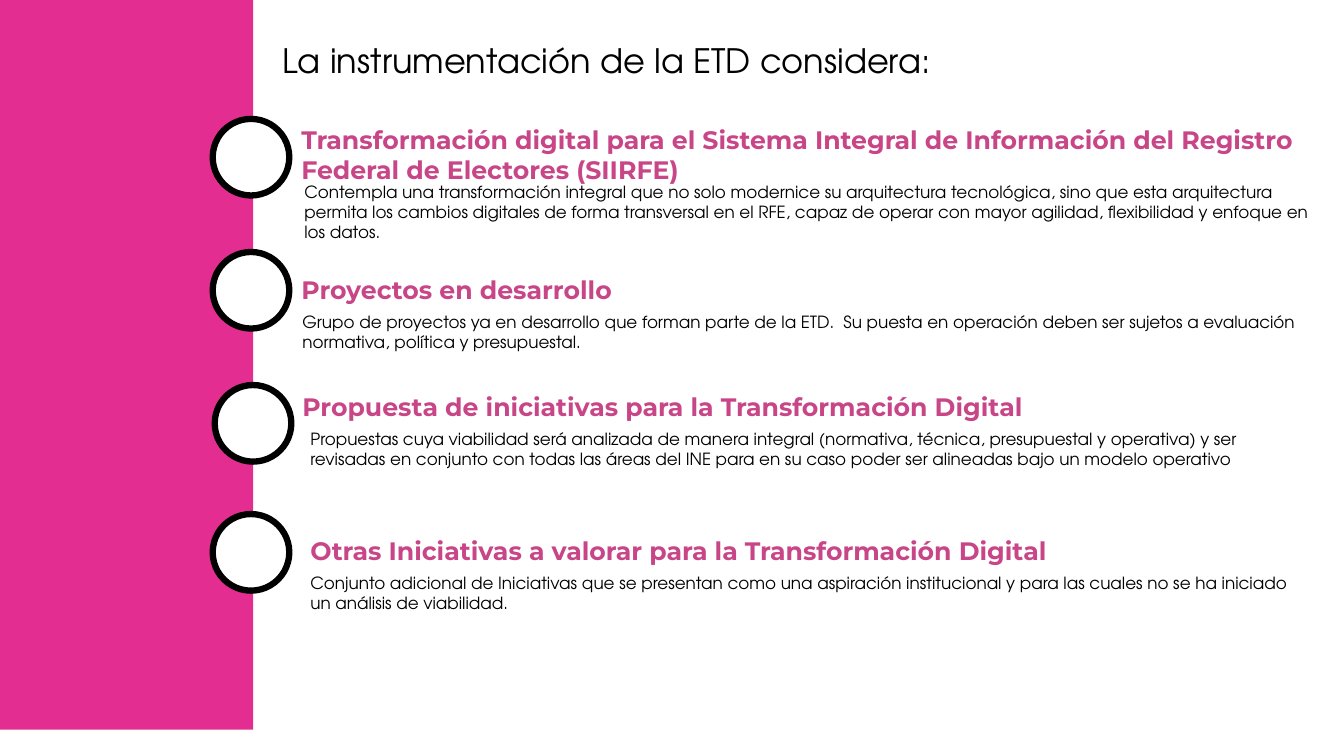
from dataclasses import dataclass

from pptx import Presentation
from pptx import util as u
from pptx.dml.color import RGBColor
from pptx.enum import shapes, text

PINK = RGBColor(0xE3, 0x2D, 0x91)
ROSE = RGBColor(0xC8, 0x46, 0x87)
BLACK = RGBColor(0, 0, 0)
WHITE = RGBColor(0xFF, 0xFF, 0xFF)
HEADING_FONT = "Montserrat"
BODY_FONT = "TeX Gyre Adventor"
CIRCLE_SIZE = 0.76


@dataclass(frozen=True)
class Box:
    left: float
    top: float
    width: float
    height: float

    def lengths(self) -> list[u.Length]:
        return [u.Inches(n) for n in (self.left, self.top, self.width, self.height)]


@dataclass(frozen=True)
class Style:
    font: str
    size: int
    color: RGBColor
    bold: bool = False
    spacing: float = 1.0
    alignment: text.PP_ALIGN = text.PP_ALIGN.LEFT


@dataclass(frozen=True)
class Topic:
    circle: tuple[float, float]
    heading: str
    heading_box: Box
    heading_style: Style
    body: str
    body_box: Box


TITLE = Style(BODY_FONT, 24, BLACK, spacing=0.9)
HEADING = Style(HEADING_FONT, 18, ROSE, bold=True)
TIGHT_HEADING = Style(HEADING_FONT, 18, ROSE, True, 0.9, text.PP_ALIGN.JUSTIFY)
BODY = Style(BODY_FONT, 12, BLACK)

TOPICS = [
    Topic(
        (2.11, 1.18),
        "Transformación digital para el Sistema Integral de Información del Registro "
        "Federal de Electores (SIIRFE)",
        Box(2.89, 1.18, 10.33, 0.71),
        HEADING,
        "Contempla una transformación integral que no solo modernice su arquitectura "
        "tecnológica, sino que esta arquitectura permita los cambios digitales de forma "
        "transversal en el RFE, capaz de operar con mayor agilidad, flexibilidad y enfoque "
        "en los datos.",
        Box(2.92, 1.75, 10.3, 0.71),
    ),
    Topic(
        (2.11, 2.5),
        "Proyectos en desarrollo",
        Box(2.89, 2.67, 6.69, 0.4),
        HEADING,
        "Grupo de proyectos ya en desarrollo que forman parte de la ETD.  Su puesta en "
        "operación deben ser sujetos a evaluación normativa, política y presupuestal.",
        Box(2.9, 3.04, 10.12, 0.5),
    ),
    Topic(
        (2.13, 3.82),
        "Propuesta de iniciativas para la Transformación Digital",
        Box(2.9, 3.87, 8.3, 0.37),
        TIGHT_HEADING,
        "Propuestas cuya viabilidad será analizada de manera integral (normativa, técnica, "
        "presupuestal y operativa) y ser revisadas en conjunto con todas las áreas del INE "
        "para en su caso poder ser alineadas bajo un modelo operativo",
        Box(2.98, 4.2, 10.04, 0.5),
    ),
    Topic(
        (2.11, 5.1),
        "Otras Iniciativas a valorar para la Transformación Digital",
        Box(2.98, 5.3, 9.95, 0.37),
        TIGHT_HEADING,
        "Conjunto adicional de Iniciativas que se presentan como una aspiración "
        "institucional y para las cuales no se ha iniciado un análisis de viabilidad.",
        Box(2.98, 5.63, 10.04, 0.5),
    ),
]


def write(shape, content: str, style: Style) -> None:
    frame = shape.text_frame
    frame.text = content
    frame.word_wrap = True
    frame.auto_size = text.MSO_AUTO_SIZE.NONE
    frame.vertical_anchor = text.MSO_ANCHOR.TOP
    paragraph = frame.paragraphs[0]
    paragraph.alignment = style.alignment
    paragraph.line_spacing = style.spacing
    paragraph.space_before = u.Pt(0)
    font = paragraph.runs[0].font
    font.name = style.font
    font.size = u.Pt(style.size)
    font.bold = style.bold
    font.color.rgb = style.color


def add_text(slide, box: Box, content: str, style: Style) -> None:
    write(slide.shapes.add_textbox(*box.lengths()), content, style)


def add_filled(slide, kind: shapes.MSO_SHAPE, box: Box, fill: RGBColor):
    shape = slide.shapes.add_shape(kind, *box.lengths())
    shape.shadow.inherit = False
    shape.fill.solid()
    shape.fill.fore_color.rgb = fill
    shape.line.fill.background()
    return shape


def add_circle(slide, left: float, top: float) -> None:
    box = Box(left, top, CIRCLE_SIZE, CIRCLE_SIZE)
    circle = add_filled(slide, shapes.MSO_SHAPE.OVAL, box, WHITE)
    circle.line.color.rgb = BLACK
    circle.line.width = u.Pt(4.5)


def main() -> None:
    presentation = Presentation()
    presentation.slide_width = u.Inches(13.33)
    presentation.slide_height = u.Inches(7.5)
    slide = presentation.slides.add_slide(presentation.slide_layouts[5])

    title = slide.shapes.title
    title.left, title.top, title.width, title.height = Box(2.7, 0.39, 8.28, 0.57).lengths()
    write(title, "La instrumentación de la ETD considera:", TITLE)

    add_filled(slide, shapes.MSO_SHAPE.RECTANGLE, Box(0, 0, 2.51, 7.24), PINK)
    for topic in TOPICS:
        add_circle(slide, *topic.circle)
        add_text(slide, topic.heading_box, topic.heading, topic.heading_style)
        add_text(slide, topic.body_box, topic.body, BODY)

    presentation.save("out.pptx")


if __name__ == "__main__":
    main()
